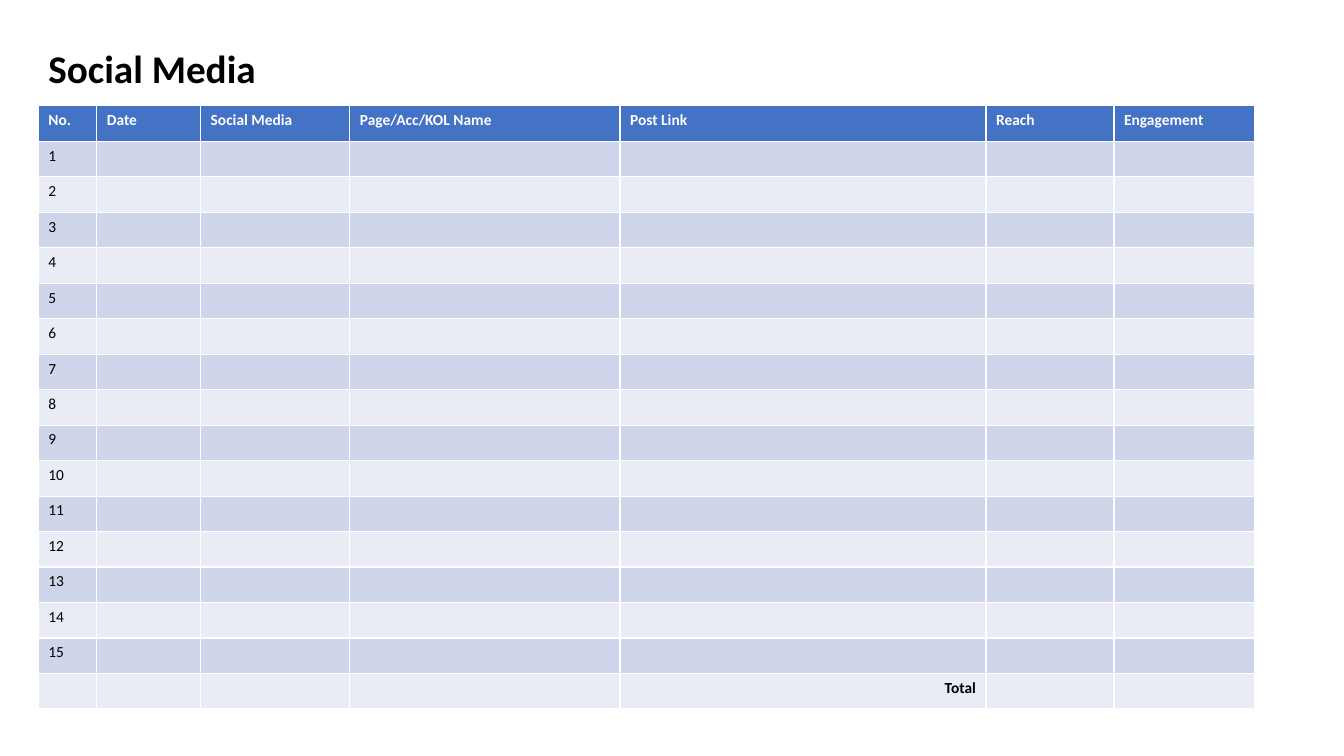
from pptx import Presentation
from pptx.dml.color import RGBColor
from pptx.enum.text import MSO_ANCHOR, PP_ALIGN
from pptx.util import Inches, Pt

HEADS = ["No.", "Date", "Social Media", "Page/Acc/KOL Name", "Post Link", "Reach", "Engagement"]
WIDTHS = [0.58, 1.03, 1.48, 2.68, 3.63, 1.27, 1.39]
POSTS = 15
BLUE, DARK, LIGHT = "4472C4", "CFD5EA", "E9EBF5"


def color(code):
    return RGBColor.from_string(code)


def write(frame, text, size=11, ink="000000", bold=False, align=PP_ALIGN.LEFT):
    """Fill the frame's first paragraph; an empty one keeps the size too."""
    para = frame.paragraphs[0]
    para.alignment = align
    if not text:
        para._p.get_or_add_endParaRPr().set("sz", str(size * 100))
        return
    run = para.add_run()
    run.text = text
    run.font.name = "Calibri"
    run.font.size = Pt(size)
    run.font.bold = bold
    run.font.color.rgb = color(ink)


deck = Presentation()
deck.slide_width, deck.slide_height = Inches(13.33), Inches(7.5)
slide = deck.slides.add_slide(deck.slide_layouts[5])

title = slide.shapes.title
title.left, title.top = Inches(0.38), Inches(0.34)
title.width, title.height = Inches(11.5), Inches(0.72)
title.text_frame.vertical_anchor = MSO_ANCHOR.MIDDLE
title.text_frame.paragraphs[0].line_spacing = 0.9
write(title.text_frame, "Social Media", size=28, bold=True)

# The default table style draws the white grid and the thick header rule
rows = POSTS + 2
table = slide.shapes.add_table(
    rows, len(HEADS), Inches(0.38), Inches(1.05), Inches(12.06), Inches(5.99)
).table
for column, width in zip(table.columns, WIDTHS):
    column.width = Inches(width)

blank = [""] * (len(HEADS) - 1)
lines = [HEADS] + [[str(n)] + blank for n in range(1, POSTS + 1)]
lines.append(["Total" if head == "Post Link" else "" for head in HEADS])

for r, line in enumerate(lines):
    shade = BLUE if r == 0 else DARK if r % 2 else LIGHT
    for c, text in enumerate(line):
        cell = table.cell(r, c)
        cell.fill.solid()
        cell.fill.fore_color.rgb = color(shade)
        write(
            cell.text_frame,
            text,
            ink="FFFFFF" if r == 0 else "000000",
            bold=r in (0, rows - 1),
            align=PP_ALIGN.RIGHT if text == "Total" else PP_ALIGN.LEFT,
        )

deck.save("out.pptx")
